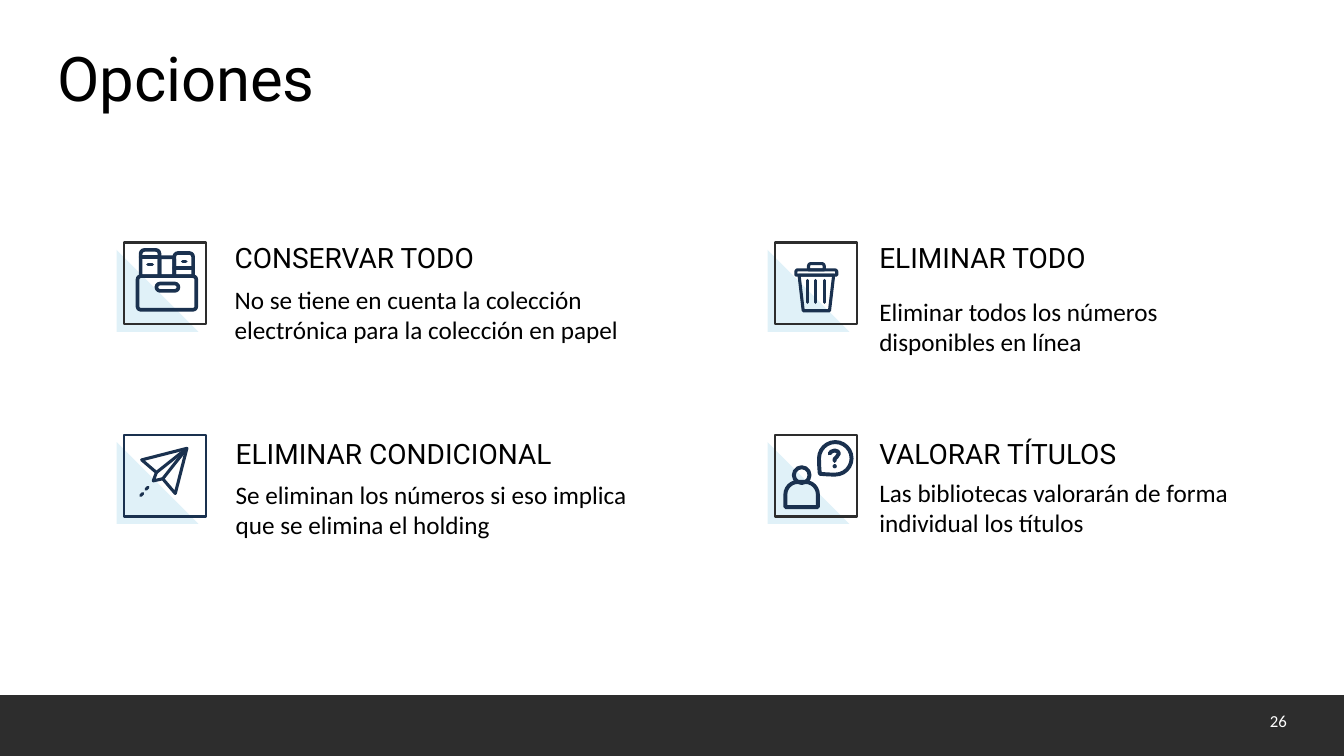
from dataclasses import dataclass

from lxml.etree import SubElement
from pptx import Presentation
from pptx.dml.color import RGBColor
from pptx.enum.shapes import MSO_CONNECTOR, MSO_SHAPE
from pptx.enum.text import MSO_ANCHOR, PP_ALIGN
from pptx.oxml.ns import qn
from pptx.shapes.base import BaseShape
from pptx.slide import Slide
from pptx.util import Emu, Pt

PX = 9525
DARK, NAVY, PALE, BLACK, WHITE = "2D2D2D", "1A314F", "E0F1F8", "000000", "FFFFFF"
SIDE, SHIFT = 78, 7
BAND = 662


@dataclass(frozen=True)
class Form:
    kind: MSO_SHAPE
    left: int
    top: int
    width: int
    height: int
    adjust: float | None = None
    turn: int = 0
    solid: bool = False


@dataclass(frozen=True)
class Trace:
    points: tuple[tuple[int, int], ...]
    closed: bool = False


@dataclass(frozen=True)
class Icon:
    weight: float
    pieces: tuple[Form | Trace, ...]


@dataclass(frozen=True)
class Label:
    left: int
    top: int
    width: int
    height: int
    lines: tuple[str, ...]
    size: int
    font: str
    color: str = BLACK
    align: PP_ALIGN = PP_ALIGN.LEFT
    anchor: MSO_ANCHOR = MSO_ANCHOR.TOP
    spacing: float = 1.0


@dataclass(frozen=True)
class Option:
    left: int
    top: int
    frame: str
    icon: Icon
    head: Label
    body: Label


def px(value: int) -> Emu:
    return Emu(value * PX)


def tint(color: str) -> RGBColor:
    return RGBColor.from_string(color)


def style(shape: BaseShape, fill: str | None, line: str | None, weight: float = 1.5) -> None:
    shape.shadow.inherit = False
    if fill:
        shape.fill.solid()
        shape.fill.fore_color.rgb = tint(fill)
    else:
        shape.fill.background()
    if line:
        stroke(shape, line, weight)
    else:
        shape.line.fill.background()


def stroke(shape: BaseShape, color: str, weight: float, smooth: bool = False) -> None:
    shape.line.color.rgb = tint(color)
    shape.line.width = Pt(weight)
    if smooth:
        pen = shape._element.spPr.find(qn("a:ln"))
        pen.set("cap", "rnd")
        SubElement(pen, qn("a:round"))


def polygon(slide: Slide, points: list[tuple[int, int]], closed: bool) -> BaseShape:
    pen = slide.shapes.build_freeform(*points[0], scale=PX)
    pen.add_line_segments(points[1:], close=closed)
    return pen.convert_to_shape()


def write(slide: Slide, label: Label) -> None:
    box = slide.shapes.add_textbox(*map(px, (label.left, label.top, label.width, label.height)))
    frame = box.text_frame
    frame.word_wrap = True
    frame.vertical_anchor = label.anchor
    para = frame.paragraphs[0]
    para.alignment = label.align
    para.line_spacing = label.spacing
    for index, line in enumerate(label.lines):
        if index:
            para.add_line_break()
        run = para.add_run()
        run.text = line
        run.font.size = Pt(label.size)
        run.font.name = label.font
        run.font.color.rgb = tint(label.color)


def trace(slide: Slide, piece: Trace, left: int, top: int, weight: float) -> None:
    points = [(left + x, top + y) for x, y in piece.points]
    if len(points) == 2:
        start, end = points
        line = slide.shapes.add_connector(MSO_CONNECTOR.STRAIGHT, *map(px, start + end))
        stroke(line, NAVY, weight, True)
        SubElement(line._element.spPr, qn("a:effectLst"))
    else:
        line = polygon(slide, points, piece.closed)
        style(line, None, None)
        stroke(line, NAVY, weight, True)


def form(slide: Slide, piece: Form, left: int, top: int, weight: float) -> None:
    place = (left + piece.left, top + piece.top, piece.width, piece.height)
    shape = slide.shapes.add_shape(piece.kind, *map(px, place))
    if piece.adjust is not None:
        shape.adjustments[0] = piece.adjust
    shape.rotation = piece.turn
    style(shape, NAVY if piece.solid else None, None)
    if not piece.solid:
        stroke(shape, NAVY, weight, True)


def draw(slide: Slide, item: Option) -> None:
    x, y = item.left - SHIFT, item.top + SHIFT
    wedge = polygon(slide, [(x, y), (x, y + SIDE), (x + SIDE, y + SIDE)], True)
    style(wedge, PALE, None)
    square = slide.shapes.add_shape(MSO_SHAPE.RECTANGLE, *map(px, (item.left, item.top, SIDE, SIDE)))
    style(square, None, item.frame)
    for piece in item.icon.pieces:
        paint = form if isinstance(piece, Form) else trace
        paint(slide, piece, item.left, item.top, item.icon.weight)
    write(slide, item.head)
    write(slide, item.body)


def head(left: int, top: int, width: int, text: str) -> Label:
    return Label(left, top, width, 42, (text,), 20, "Roboto")


def body(left: int, top: int, width: int, *lines: str) -> Label:
    return Label(left, top, width, 68, lines, 18, "Calibri")


ROUND, TAB, OVAL = MSO_SHAPE.ROUNDED_RECTANGLE, MSO_SHAPE.ROUND_2_SAME_RECTANGLE, MSO_SHAPE.OVAL
TIP, MID, FOLD = (60, 13), (31, 36), (37, 42)
CRATE = Icon(2.6, (
    Form(TAB, 16, 7, 18, 25, 0.2), Form(TAB, 34, 14, 14, 18, 0.15), Form(TAB, 48, 10, 18, 22, 0.2),
    Form(ROUND, 13, 32, 56, 32, 0.1), Form(ROUND, 31, 39, 21, 7, 0.5),
    Trace(((16, 14), (34, 14))), Trace(((48, 24), (66, 24))),
    Trace(((23, 21), (27, 21))), Trace(((56, 18), (59, 18)))))
TRASH = Icon(2.2, (
    Form(TAB, 32, 20, 15, 6, 0.4), Form(TAB, 20, 26, 39, 5, 0.4),
    Trace(((23, 31), (56, 31), (52, 65), (27, 65)), True),
    *(Trace(((x, 36), (x, 57))) for x in (31, 39, 47))))
PLANE = Icon(2.2, (
    Trace((TIP, (17, 24), MID, (28, 44), FOLD, (49, 56)), True),
    Trace((MID, TIP)), Trace((FOLD, TIP)),
    Trace(((16, 58), (18, 56))), Trace(((21, 52), (23, 50)))))
ASK = Icon(2.8, (
    Form(OVAL, 18, 31, 15, 15), Form(TAB, 10, 45, 31, 24, 0.5),
    Form(MSO_SHAPE.TEAR, 42, 7, 31, 31, 0.95, 180),
    Trace(((52, 18), (54, 16), (57, 15), (60, 16), (61, 18), (59, 21), (57, 23), (57, 25))),
    Form(OVAL, 55, 28, 4, 4, solid=True)))

OPTIONS = (
    Option(118, 231, DARK, CRATE, head(214, 224, 274, "CONSERVAR TODO"),
           body(214, 266, 389, "No se tiene en cuenta la colección", "electrónica para la colección en papel")),
    Option(738, 231, DARK, TRASH, head(828, 224, 238, "ELIMINAR TODO"),
           body(828, 277, 287, "Eliminar todos los números", "disponibles en línea")),
    Option(118, 414, NAVY, PLANE, head(215, 411, 352, "ELIMINAR CONDICIONAL"),
           body(215, 452, 396, "Se eliminan los números si eso implica", "que se elimina el holding")),
    Option(738, 414, DARK, ASK, head(828, 411, 270, "VALORAR TÍTULOS"),
           body(828, 450, 355, "Las bibliotecas valorarán de forma", "individual los títulos")))


def main() -> None:
    deck = Presentation()
    deck.slide_width, deck.slide_height = px(1280), px(720)
    slide = deck.slides.add_slide(deck.slide_layouts[6])
    band = slide.shapes.add_shape(MSO_SHAPE.RECTANGLE, *map(px, (0, BAND, 1280, 720 - BAND)))
    style(band, DARK, None)
    write(slide, Label(45, 38, 1190, 80, ("Opciones",), 44, "Roboto",
                       anchor=MSO_ANCHOR.MIDDLE, spacing=0.9))
    write(slide, Label(947, 667, 288, 38, ("26",), 12, "Calibri", WHITE,
                       PP_ALIGN.RIGHT, MSO_ANCHOR.MIDDLE))
    for item in OPTIONS:
        draw(slide, item)
    deck.save("out.pptx")


if __name__ == "__main__":
    main()
